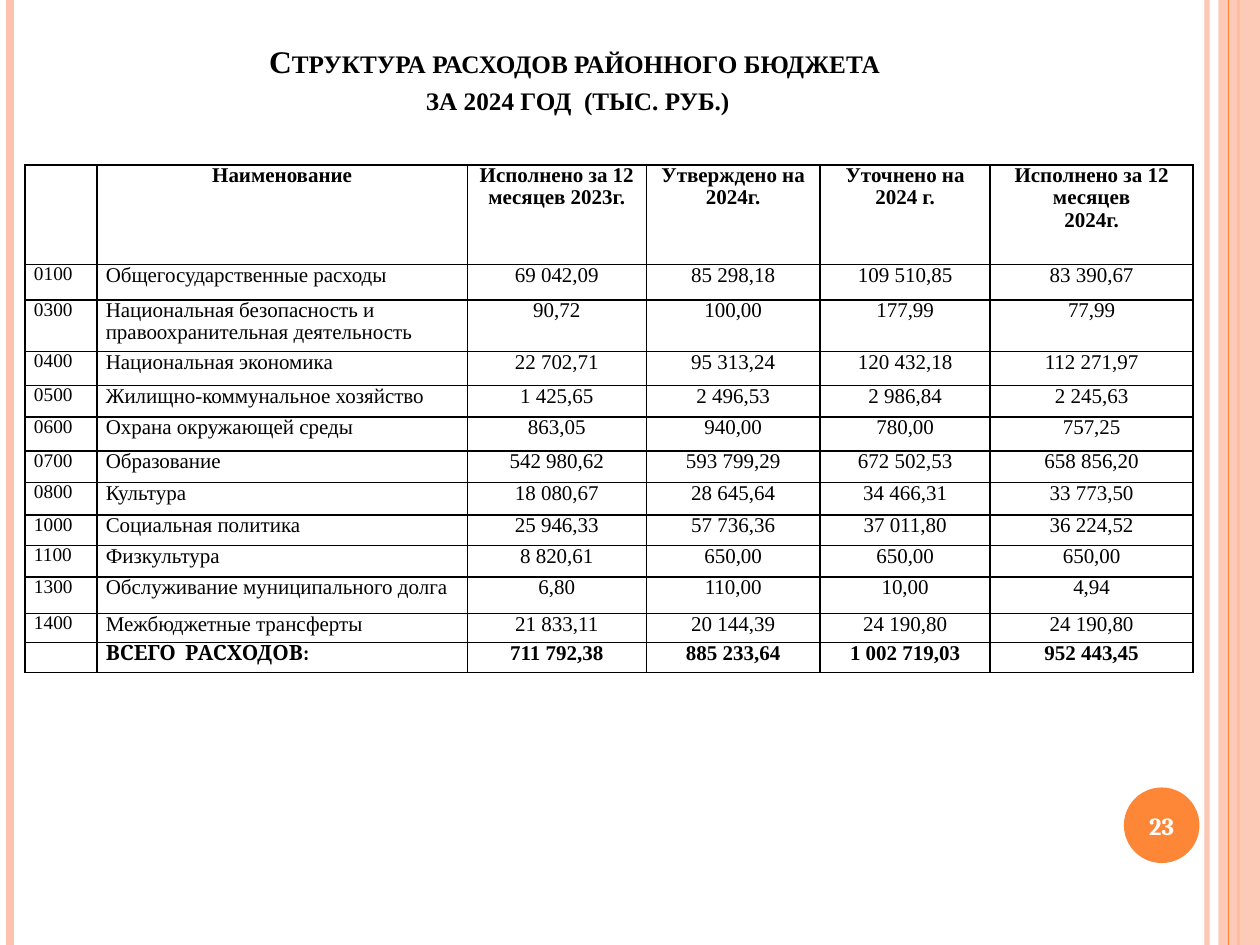
from dataclasses import dataclass

from lxml import etree
from pptx import Presentation
from pptx import util as u
from pptx.dml.color import RGBColor
from pptx.enum import shapes, text
from pptx.oxml import ns

GRID_COLUMNS, GRID_ROWS = 100, 75


@dataclass(frozen=True)
class Theme:
    body_font: str = "Times New Roman"
    accent_font: str = "Cambria"
    ink: str = "000000"
    paper: str = "FFFFFF"
    peach: str = "FEC3AE"
    orange: str = "FE8637"
    title_size: int = 18
    number_size: int = 14
    table_size: int = 12
    code_size: int = 11
    border: float = 1
    cell_inset: float = 0.7  # grid columns
    line_spacing: float = 0.95


def write(frame, words, *, font, size, color, bold=False, align=text.PP_ALIGN.LEFT,
          spacing=None, small_caps=False):
    """Fill a text frame with one formatted paragraph; a newline breaks the line."""
    paragraph = frame.paragraphs[0]
    paragraph.text = words.replace("\n", "\v")
    paragraph.alignment = align
    if spacing:
        paragraph.line_spacing = spacing
    for run in paragraph.runs:
        run.font.name, run.font.size, run.font.bold = font, u.Pt(size), bold
        run.font.color.rgb = RGBColor.from_string(color)
        if small_caps:
            run.font._element.set("cap", "small")
    if not words:
        # An empty cell keeps the row low only with its own type size
        etree.SubElement(paragraph._p, ns.qn("a:endParaRPr"), sz=str(size * 100))


def set_opacity(fill_owner, percent):
    color = fill_owner.find(".//" + ns.qn("a:srgbClr"))
    etree.SubElement(color, ns.qn("a:alpha"), val=str(percent * 1000))


class BudgetSlide:
    def __init__(self, deck, theme):
        self.theme = theme
        self.column = deck.slide_width / GRID_COLUMNS
        self.row = deck.slide_height / GRID_ROWS
        self.slide = deck.slides.add_slide(deck.slide_layouts[5])

    def x(self, columns):
        return u.Emu(round(columns * self.column))

    def y(self, rows):
        return u.Emu(round(rows * self.row))

    def box(self, left, top, width, height):
        return self.x(left), self.y(top), self.x(width), self.y(height)

    def title(self, words, *place):
        heading = self.slide.shapes.title
        heading.left, heading.top, heading.width, heading.height = self.box(*place)
        heading.text_frame.vertical_anchor = text.MSO_ANCHOR.BOTTOM
        heading.text_frame.word_wrap = True
        write(heading.text_frame, words, font=self.theme.body_font,
              size=self.theme.title_size, color=self.theme.ink, bold=True,
              align=text.PP_ALIGN.CENTER, small_caps=True)

    def stripe(self, column, color, width, opacity=100):
        x = self.x(column)
        line = self.slide.shapes.add_connector(
            shapes.MSO_CONNECTOR.STRAIGHT, x, 0, x, self.y(GRID_ROWS))
        line.line.color.rgb = RGBColor.from_string(color)
        line.line.width = u.Pt(width)
        if opacity < 100:
            set_opacity(line._element.spPr, opacity)
        etree.SubElement(line._element.spPr, ns.qn("a:effectLst"))

    def shape(self, kind, color, *place, opacity=100):
        shape = self.slide.shapes.add_shape(kind, *self.box(*place))
        shape.shadow.inherit = False
        shape.fill.solid()
        shape.fill.fore_color.rgb = RGBColor.from_string(color)
        shape.line.fill.background()
        if opacity < 100:
            set_opacity(shape._element.spPr, opacity)
        return shape

    def page_number(self, number, *place):
        badge = self.shape(shapes.MSO_SHAPE.OVAL, self.theme.orange, *place)
        frame = badge.text_frame
        frame.margin_left = frame.margin_right = 0
        frame.vertical_anchor = text.MSO_ANCHOR.MIDDLE
        write(frame, str(number), font=self.theme.accent_font,
              size=self.theme.number_size, color=self.theme.paper, bold=True,
              align=text.PP_ALIGN.CENTER)

    def cell(self, cell, words, **style):
        cell.margin_left = cell.margin_right = self.x(self.theme.cell_inset)
        cell.margin_top = cell.margin_bottom = 0
        write(cell.text_frame, words, color=self.theme.ink,
              spacing=self.theme.line_spacing, **style)
        # Borders come before the fill in the cell properties
        properties = cell._tc.get_or_add_tcPr()
        for side in ("lnL", "lnR", "lnT", "lnB"):
            edge = etree.SubElement(properties, ns.qn("a:" + side),
                                    w=str(u.Pt(self.theme.border)))
            solid = etree.SubElement(edge, ns.qn("a:solidFill"))
            etree.SubElement(solid, ns.qn("a:srgbClr"), val=self.theme.ink)
        cell.fill.background()

    def table(self, records, left, top, widths, heights):
        table = self.slide.shapes.add_table(
            len(heights), len(widths),
            *self.box(left, top, sum(widths), sum(heights))).table
        table.first_row = table.horz_banding = False
        for column, width in zip(table.columns, widths):
            column.width = self.x(width)
        for row, height in zip(table.rows, heights):
            row.height = self.y(height)
        last = len(records) - 1
        for r, record in enumerate(records):
            for c, words in enumerate(record):
                is_total_label = r == last and c == 1
                centred = r == 0 or c > 1
                self.cell(
                    table.cell(r, c), words,
                    font=self.theme.accent_font if is_total_label else self.theme.body_font,
                    size=self.theme.table_size if c else self.theme.code_size,
                    bold=r in (0, last),
                    align=text.PP_ALIGN.CENTER if centred else text.PP_ALIGN.LEFT)


EXPENSES = [
    ("", "Наименование", "Исполнено за 12 месяцев 2023г.", "Утверждено на 2024г.",
     "Уточнено на 2024 г.", "Исполнено за 12 месяцев\n2024г."),
    ("0100", "Общегосударственные расходы", "69 042,09", "85 298,18", "109 510,85", "83 390,67"),
    ("0300", "Национальная безопасность и правоохранительная деятельность",
     "90,72", "100,00", "177,99", "77,99"),
    ("0400", "Национальная экономика", "22 702,71", "95 313,24", "120 432,18", "112 271,97"),
    ("0500", "Жилищно-коммунальное хозяйство", "1 425,65", "2 496,53", "2 986,84", "2 245,63"),
    ("0600", "Охрана окружающей среды", "863,05", "940,00", "780,00", "757,25"),
    ("0700", "Образование", "542 980,62", "593 799,29", "672 502,53", "658 856,20"),
    ("0800", "Культура", "18 080,67", "28 645,64", "34 466,31", "33 773,50"),
    ("1000", "Социальная политика", "25 946,33", "57 736,36", "37 011,80", "36 224,52"),
    ("1100", "Физкультура", "8 820,61", "650,00", "650,00", "650,00"),
    ("1300", "Обслуживание муниципального долга", "6,80", "110,00", "10,00", "4,94"),
    ("1400", "Межбюджетные трансферты", "21 833,11", "20 144,39", "24 190,80", "24 190,80"),
    ("", "ВСЕГО  РАСХОДОВ:", "711 792,38", "885 233,64", "1 002 719,03", "952 443,45"),
]
COLUMN_WIDTHS = [5.7, 29.4, 14.2, 13.8, 13.5, 16.1]
ROW_HEIGHTS = [7.9, 2.8, 4.1, 2.7, 2.5, 2.7, 2.5, 2.6, 2.4, 2.5, 2.9, 2.3, 2.4]


def main():
    deck = Presentation()
    deck.slide_width, deck.slide_height = u.Inches(10), u.Inches(7.5)
    theme = Theme()
    page = BudgetSlide(deck, theme)

    # Side stripes
    page.stripe(95.8, theme.peach, 3, opacity=93)
    page.stripe(0.8, theme.peach, 4.5)
    page.stripe(98.3, theme.orange, 1.5)
    page.shape(shapes.MSO_SHAPE.RECTANGLE, theme.peach, 96.7, 0, 3.3, GRID_ROWS, opacity=87)
    page.stripe(97.5, theme.orange, 0.75)

    # Heading, expense table and page number
    page.title("Структура расходов районного бюджета \nза 2024 год  (тыс. руб.)",
               5, 3, 81.7, 6.8)
    page.table(EXPENSES, 2, 13.1, COLUMN_WIDTHS, ROW_HEIGHTS)
    page.page_number(23, 89.2, 62.5, 6, 6)

    deck.save("out.pptx")


if __name__ == "__main__":
    main()
